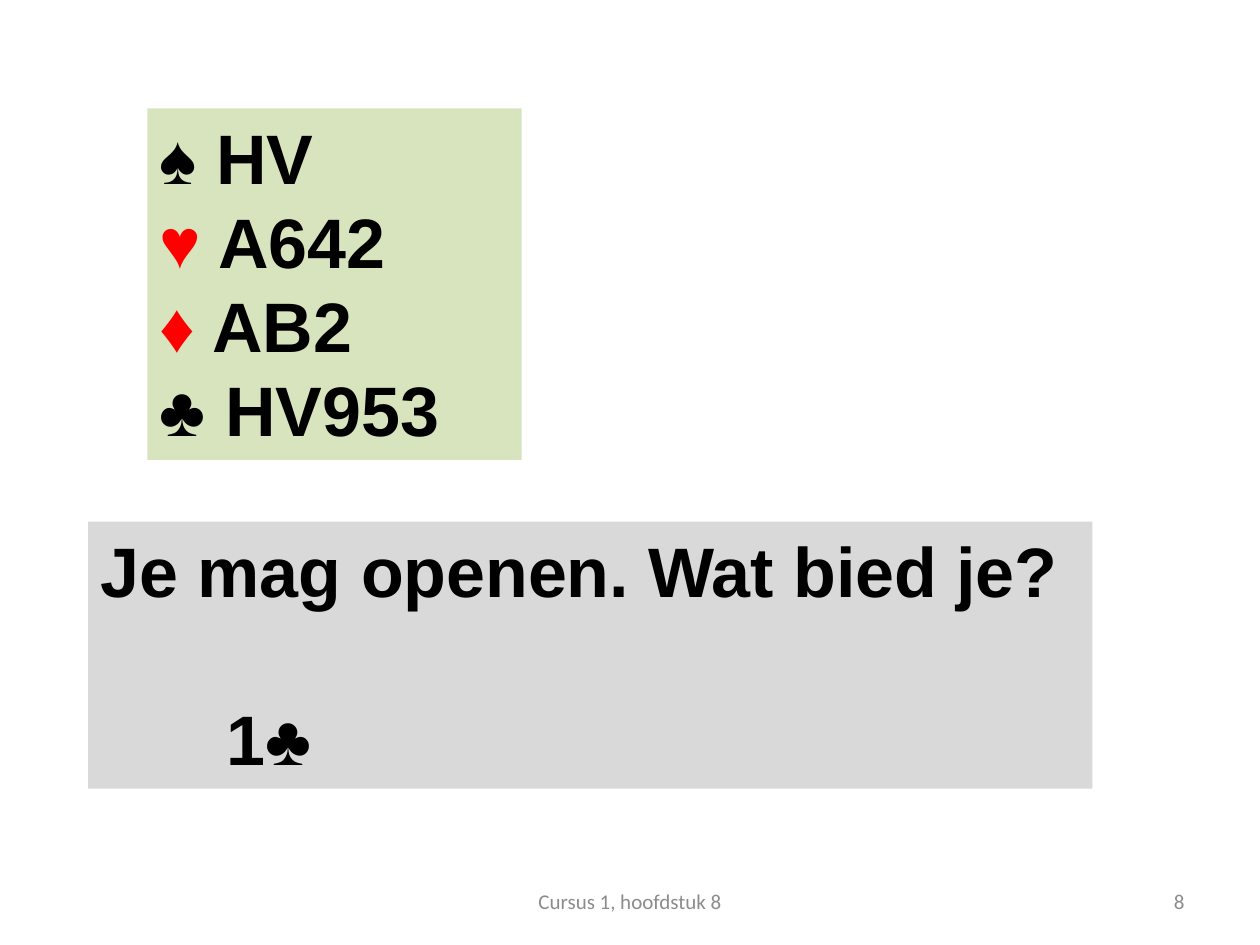
from pptx import Presentation
from pptx.dml.color import RGBColor
from pptx.enum.shapes import MSO_SHAPE
from pptx.enum.text import MSO_ANCHOR, PP_ALIGN
from pptx.util import Inches, Pt

# Content: paragraphs are lists of (text, colour name) runs
HAND = [
    [("♠ HV", "black")],
    [("♥", "red"), (" A642", "black")],
    [("♦", "red"), (" AB2", "black")],
    [("♣ HV953", "black")],
]
QUESTION = [
    [("Je mag openen. Wat bied je?", "black")],
    [("1♣", "black")],
]
FOOTER = [[("Cursus 1, hoofdstuk 8", "grey")]]
PAGE_NUMBER = [[("8", "grey")]]

THEME = {
    "black": RGBColor(0x00, 0x00, 0x00),
    "red": RGBColor(0xFF, 0x00, 0x00),
    "grey": RGBColor(0x8C, 0x8C, 0x8C),
    "hand": RGBColor(0xD7, 0xE4, 0xBD),
    "question": RGBColor(0xD9, 0xD9, 0xD9),
    "body": ("Arial", Pt(40), True),
    "small": ("Calibri", Pt(12), False),
}
WIDTH, HEIGHT = 10, 7.5
FOOTER_TOP, FOOTER_HEIGHT = 6.95, 0.4
FOOTER_WIDTH, NUMBER_WIDTH, MARGIN = 3.17, 2.33, 0.5
ANSWER_GAP, ANSWER_INDENT = Pt(48), Inches(1)


def write(shape, paragraphs, style, alignment, anchor):
    """Fill a shape with coloured runs in one type style."""
    frame = shape.text_frame
    frame.word_wrap = True
    frame.vertical_anchor = anchor
    name, size, bold = THEME[style]
    for index, runs in enumerate(paragraphs):
        paragraph = frame.add_paragraph() if index else frame.paragraphs[0]
        paragraph.alignment = alignment
        paragraph.font.name, paragraph.font.size = name, size
        paragraph.font.bold = bold
        for text, colour in runs:
            run = paragraph.add_run()
            run.text = text
            run.font.color.rgb = THEME[colour]


def add_panel(slide, box, fill, paragraphs):
    shape = slide.shapes.add_shape(MSO_SHAPE.RECTANGLE, *map(Inches, box))
    shape.shadow.inherit = False
    shape.fill.solid()
    shape.fill.fore_color.rgb = THEME[fill]
    shape.line.fill.background()
    write(shape, paragraphs, "body", PP_ALIGN.LEFT, MSO_ANCHOR.TOP)
    return shape


def add_footer(slide, left, width, paragraphs, alignment):
    box = (left, FOOTER_TOP, width, FOOTER_HEIGHT)
    shape = slide.shapes.add_textbox(*map(Inches, box))
    write(shape, paragraphs, "small", alignment, MSO_ANCHOR.MIDDLE)


def main():
    presentation = Presentation()
    presentation.slide_width = Inches(WIDTH)
    presentation.slide_height = Inches(HEIGHT)
    slide = presentation.slides.add_slide(presentation.slide_layouts[6])

    # Hand of cards
    add_panel(slide, (1.17, 0.86, 2.97, 2.79), "hand", HAND)

    # Question, with the answer set lower and indented
    question = add_panel(slide, (0.7, 4.14, 7.97, 2.12), "question", QUESTION)
    answer = question.text_frame.paragraphs[-1]
    answer.space_before = ANSWER_GAP
    properties = answer._p.get_or_add_pPr()
    properties.set("marL", str(ANSWER_INDENT))
    properties.set("indent", "0")

    # Page number at the right margin, footer in the centre
    add_footer(slide, WIDTH - MARGIN - NUMBER_WIDTH, NUMBER_WIDTH,
               PAGE_NUMBER, PP_ALIGN.RIGHT)
    add_footer(slide, (WIDTH - FOOTER_WIDTH) / 2, FOOTER_WIDTH,
               FOOTER, PP_ALIGN.CENTER)

    presentation.save("out.pptx")


if __name__ == "__main__":
    main()
